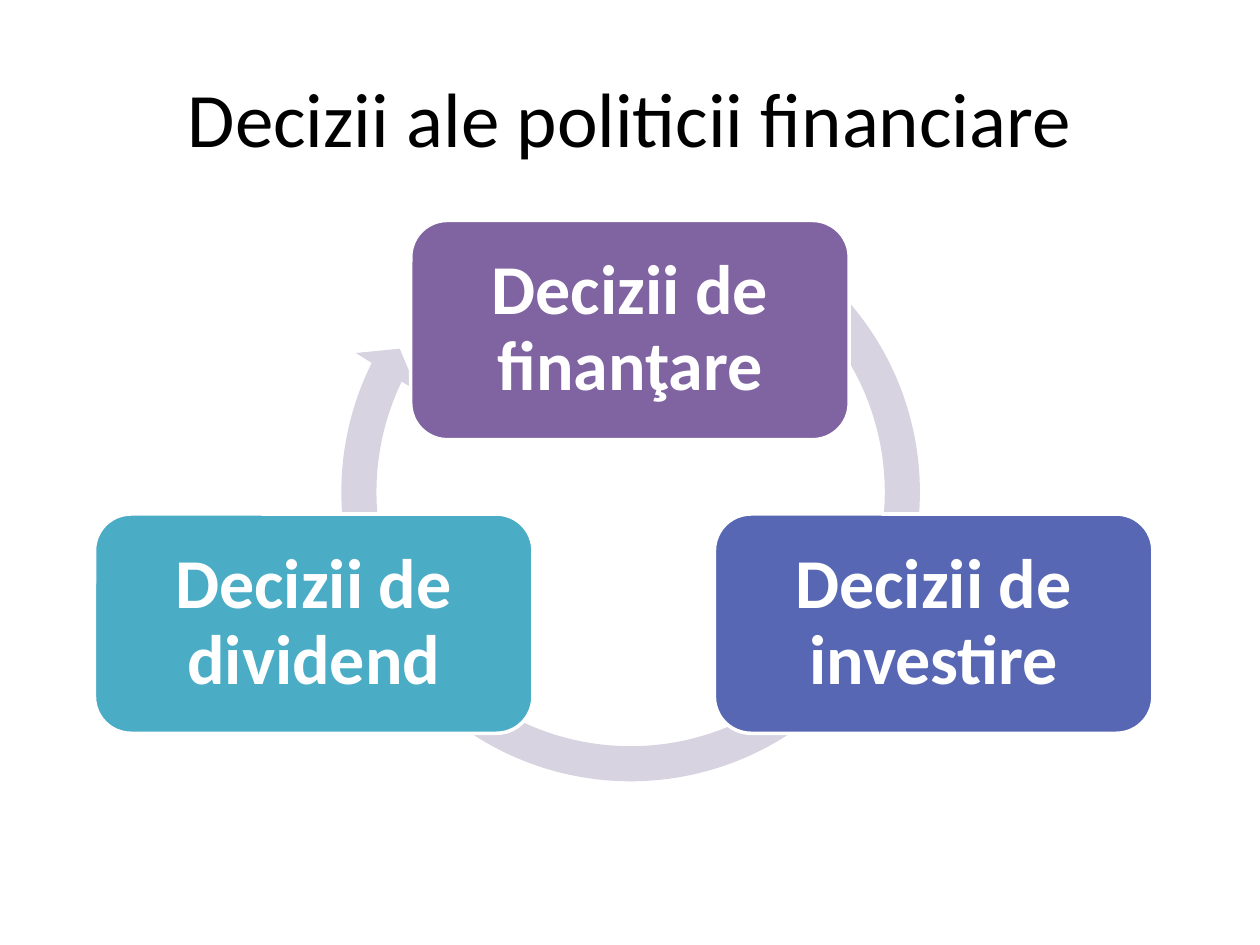
from lxml import etree
from pptx import Presentation
from pptx.dml.color import RGBColor
from pptx.enum import shapes, text
from pptx.util import Inches, Pt

FONT = "Calibri"
BOX_WIDTH, BOX_HEIGHT = 3.48, 1.74
DECISIONS = [
    ("Decizii de finanţare", 3.26, 1.75, "8064A2"),
    ("Decizii de investire", 5.67, 4.08, "5767B4"),
    ("Decizii de dividend", 0.75, 4.08, "4BACC6"),
]


def color(value):
    """Return the colour for a hex string."""
    return RGBColor.from_string(value)


def write(shape, wording, size, hex_color, bold=False, inset=0.1):
    """Write one centred paragraph into a shape."""
    frame = shape.text_frame
    frame.word_wrap = True
    frame.auto_size = text.MSO_AUTO_SIZE.NONE
    frame.vertical_anchor = text.MSO_ANCHOR.MIDDLE
    frame.margin_left = frame.margin_right = Inches(inset)
    frame.margin_top = frame.margin_bottom = Inches(inset)
    paragraph = frame.paragraphs[0]
    paragraph.alignment = text.PP_ALIGN.CENTER
    run = paragraph.add_run()
    run.text = wording
    run.font.name = FONT
    run.font.size = Pt(size)
    run.font.bold = bold
    run.font.color.rgb = color(hex_color)
    return paragraph


def add_title(slide, wording):
    """Place and fill the title placeholder."""
    title = slide.shapes.title
    title.left, title.top = Inches(0.5), Inches(0.3)
    title.width, title.height = Inches(9), Inches(1.25)
    write(title, wording, 44, "000000")


def add_filled_shape(slide, kind, left, top, width, height, fill):
    """Add a flat preset shape with a solid fill."""
    shape = slide.shapes.add_shape(
        kind, Inches(left), Inches(top), Inches(width), Inches(height)
    )
    shape.shadow.inherit = False
    shape.fill.solid()
    shape.fill.fore_color.rgb = color(fill)
    return shape


def add_cycle_arrow(slide):
    """Add the circular arrow that links the decisions."""
    arrow = add_filled_shape(
        slide, shapes.MSO_SHAPE.CIRCULAR_ARROW, 2.56, 1.46, 4.89, 4.89, "D8D3E0"
    )
    arrow.line.fill.background()
    geometry = arrow.element.spPr.prstGeom
    guides = geometry.get_or_add_avLst()
    for guide in list(guides):
        guides.remove(guide)
    values = (5700, 340500, 12369600, 18307100, 5900)
    for number, value in enumerate(values, 1):
        guide = etree.SubElement(guides, guides.tag.replace("avLst", "gd"))
        guide.set("name", f"adj{number}")
        guide.set("fmla", f"val {value}")


def add_decision(slide, wording, left, top, fill):
    """Add a rounded box for one decision."""
    box = add_filled_shape(
        slide, shapes.MSO_SHAPE.ROUNDED_RECTANGLE,
        left, top, BOX_WIDTH, BOX_HEIGHT, fill,
    )
    box.line.color.rgb = color("FFFFFF")
    box.line.width = Pt(2)
    paragraph = write(box, wording, 40, "FFFFFF", bold=True, inset=0.17)
    paragraph.line_spacing = 0.9


def main():
    """Build and save the slide."""
    presentation = Presentation()
    presentation.slide_width = Inches(10)
    presentation.slide_height = Inches(7.5)
    slide = presentation.slides.add_slide(presentation.slide_layouts[5])
    add_title(slide, "Decizii ale politicii financiare")
    add_cycle_arrow(slide)
    for decision in DECISIONS:
        add_decision(slide, *decision)
    presentation.save("out.pptx")


if __name__ == "__main__":
    main()
